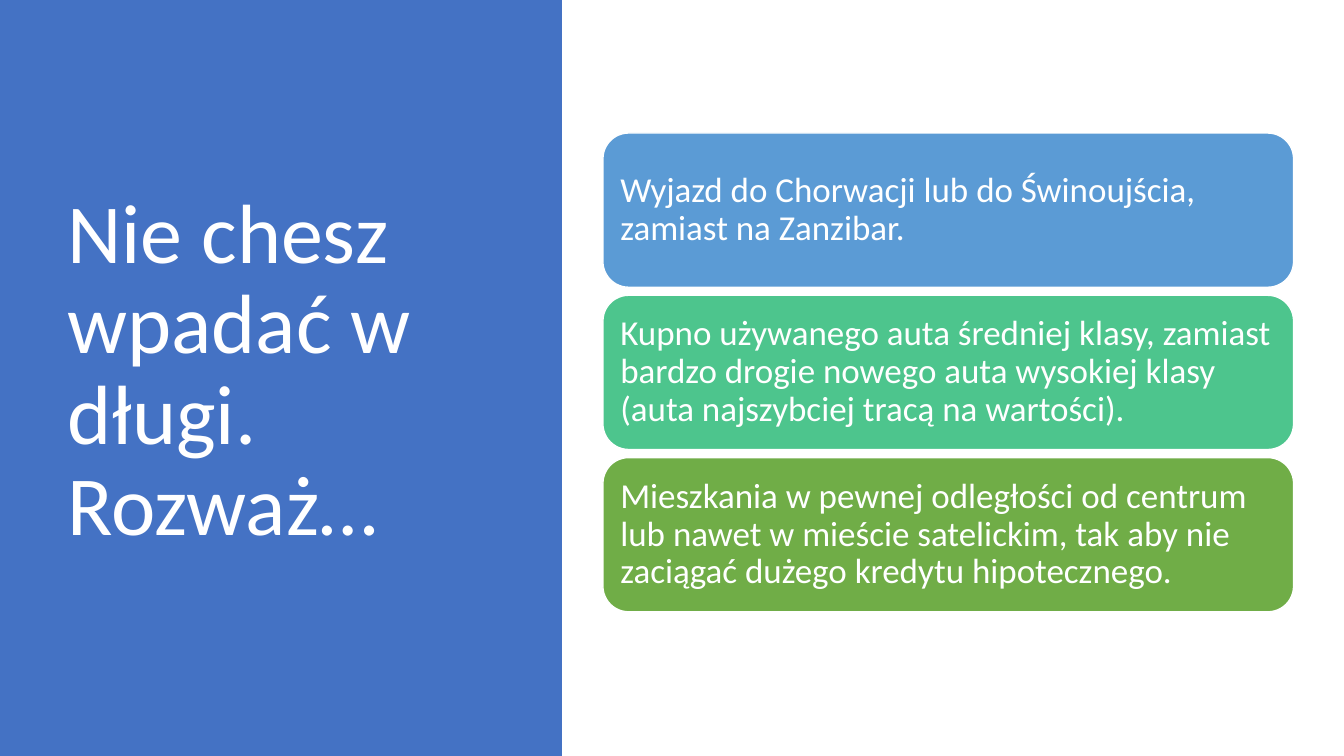
from dataclasses import dataclass

import pptx
import pptx.dml.color
import pptx.enum.shapes
import pptx.enum.text
import pptx.util

SHAPE = pptx.enum.shapes.MSO_SHAPE
WIDTH = 13.33
HEIGHT = 7.5


@dataclass(frozen=True)
class Theme:
    font: str = "Calibri"
    white: str = "FFFFFF"
    panel: str = "4472C4"
    title_size: float = 60
    card_size: float = 25
    line_width: float = 1
    line_spacing: float = 0.9


@dataclass(frozen=True)
class Box:
    left: float
    top: float
    width: float
    height: float

    def emu(self) -> tuple[int, ...]:
        return tuple(
            pptx.util.Inches(v)
            for v in (self.left, self.top, self.width, self.height)
        )


@dataclass(frozen=True)
class Column:
    left: float
    top: float
    width: float
    row_height: float
    gap: float

    def row(self, index: int) -> Box:
        top = self.top + index * (self.row_height + self.gap)
        return Box(self.left, top, self.width, self.row_height)


@dataclass(frozen=True)
class Card:
    text: str
    fill: str


THEME = Theme()
PANEL = Box(0, 0, 0.418 * WIDTH, HEIGHT)
TITLE = Box(0.57, 0.68, 4.16, 6.02)
CARD_COLUMN = Column(left=5.98, top=1.32, width=6.85, row_height=1.53, gap=0.08)
CARDS = (
    Card("Wyjazd do Chorwacji lub do Świnoujścia, zamiast na Zanzibar.", "5B9BD5"),
    Card(
        "Kupno używanego auta średniej klasy, zamiast bardzo drogie nowego auta "
        "wysokiej klasy (auta najszybciej tracą na wartości).",
        "4DC58D",
    ),
    Card(
        "Mieszkania w pewnej odległości od centrum lub nawet w mieście satelickim, "
        "tak aby nie zaciągać dużego kredytu hipotecznego.",
        "70AD47",
    ),
)


def rgb(color: str) -> pptx.dml.color.RGBColor:
    return pptx.dml.color.RGBColor.from_string(color)


def write(sp, text: str, *, size: float, color: str, inset: float) -> None:
    tf = sp.text_frame
    tf.word_wrap = True
    tf.vertical_anchor = pptx.enum.text.MSO_ANCHOR.MIDDLE
    tf.margin_left = tf.margin_right = pptx.util.Inches(inset)
    tf.margin_top = tf.margin_bottom = pptx.util.Inches(inset)
    p = tf.paragraphs[0]
    p.alignment = pptx.enum.text.PP_ALIGN.LEFT
    p.line_spacing = THEME.line_spacing
    r = p.add_run()
    r.text = text
    r.font.name = THEME.font
    r.font.size = pptx.util.Pt(size)
    r.font.color.rgb = rgb(color)


def add_block(s, kind: SHAPE, box: Box, fill: str, line: str | None = None):
    sp = s.shapes.add_shape(kind, *box.emu())
    sp.shadow.inherit = False
    sp.fill.solid()
    sp.fill.fore_color.rgb = rgb(fill)
    if line is None:
        sp.line.fill.background()
    else:
        sp.line.color.rgb = rgb(line)
        sp.line.width = pptx.util.Pt(THEME.line_width)
    return sp


def add_card(s, card: Card, box: Box) -> None:
    sp = add_block(s, SHAPE.ROUNDED_RECTANGLE, box, card.fill, THEME.white)
    write(sp, card.text, size=THEME.card_size, color=THEME.white, inset=0.1)


def main() -> None:
    prs = pptx.Presentation()
    prs.slide_width = pptx.util.Inches(WIDTH)
    prs.slide_height = pptx.util.Inches(HEIGHT)
    s = prs.slides.add_slide(prs.slide_layouts[6])

    add_block(s, SHAPE.RECTANGLE, PANEL, THEME.panel)
    title = s.shapes.add_textbox(*TITLE.emu())
    write(
        title,
        "Nie chesz wpadać w długi. Rozważ…",
        size=THEME.title_size,
        color=THEME.white,
        inset=0.1,
    )
    for index, card in enumerate(CARDS):
        add_card(s, card, CARD_COLUMN.row(index))

    prs.save("out.pptx")


if __name__ == "__main__":
    main()
